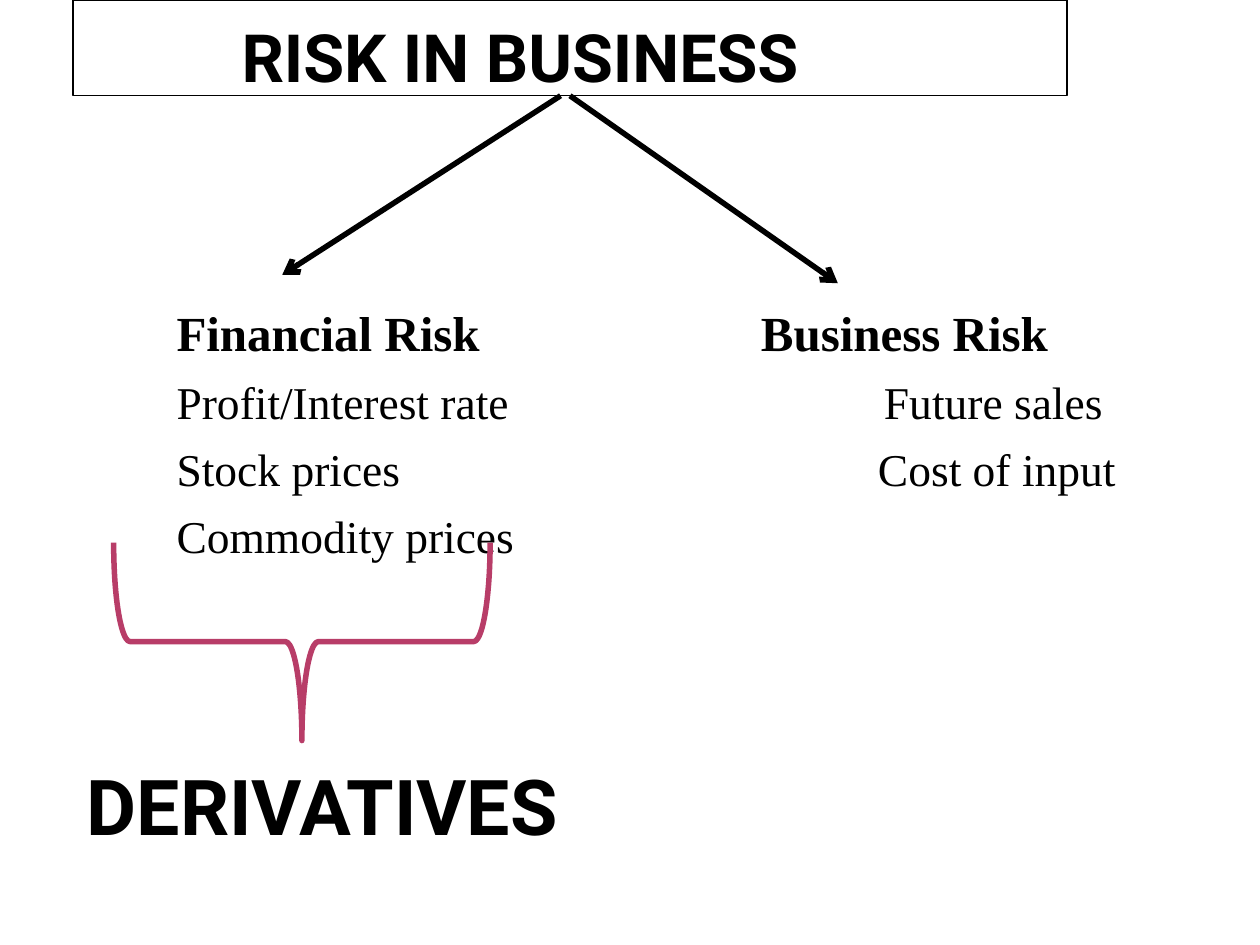
from lxml import etree
from pptx import Presentation
from pptx import util as u
from pptx.dml.color import RGBColor
from pptx.enum import shapes, text
from pptx.oxml.ns import qn

HEAD, BODY = "Roboto", "Times New Roman"
BLACK, WHITE, ROSE = "000000", "FFFFFF", "B83D68"


def rgb(value):
    return RGBColor.from_string(value)


def write(p, content, size=26, font=BODY, bold=False, before=0, indent=0):
    p.space_before = u.Pt(before)
    p.alignment = text.PP_ALIGN.LEFT
    if indent:
        p._p.get_or_add_pPr().set("marL", str(u.Cm(indent)))
    r = p.add_run()
    r.text = content
    r.font.size, r.font.name, r.font.bold = u.Pt(size), font, bold
    r.font.color.rgb = rgb(BLACK)


class Deck:
    heavy = 3.15

    def __init__(self, prs):
        self.s = prs.slides.add_slide(prs.slide_layouts[6])

    def frame(self, sp, left=0):
        tf = sp.text_frame
        tf.word_wrap = True
        tf.margin_left = u.Cm(left)
        tf.margin_right = tf.margin_top = tf.margin_bottom = 0
        return tf

    def shape(self, kind, box, line, width, fill=None):
        sp = self.s.shapes.add_shape(kind, *map(u.Cm, box))
        sp.shadow.inherit = False
        if fill:
            sp.fill.solid()
            sp.fill.fore_color.rgb = rgb(fill)
        else:
            sp.fill.background()
        sp.line.color.rgb = rgb(line)
        sp.line.width = u.Pt(width)
        return sp

    def text(self, box, lines):
        tf = self.frame(self.s.shapes.add_textbox(*map(u.Cm, box)))
        for i, (content, style) in enumerate(lines):
            p = tf.add_paragraph() if i else tf.paragraphs[0]
            write(p, content, before=7.2 if i else 0, **style)

    def arrow(self, start, end):
        c = self.s.shapes.add_connector(
            shapes.MSO_CONNECTOR.STRAIGHT, *map(u.Cm, start + end))
        c.line.color.rgb = rgb(BLACK)
        c.line.width = u.Pt(self.heavy)
        etree.SubElement(c.line._get_or_add_ln(), qn("a:tailEnd"), type="arrow")
        etree.SubElement(c._element.spPr, qn("a:effectLst"))
        return c


def main():
    prs = Presentation()
    prs.slide_width, prs.slide_height = u.Cm(25.4), u.Cm(19.05)
    deck = Deck(prs)

    # Title bar
    title = deck.shape(shapes.MSO_SHAPE.RECTANGLE, (1.47, 0, 20.04, 1.93),
                       BLACK, 0.75, WHITE)
    tf = deck.frame(title, left=3.4)
    tf.vertical_anchor = text.MSO_ANCHOR.BOTTOM
    write(tf.paragraphs[0], "RISK IN BUSINESS", size=38, font=HEAD, bold=True)

    # Two kinds of risk
    heading = dict(size=28, bold=True)
    deck.text((3.56, 6.1, 9, 5.2), [
        ("Financial Risk", heading),
        ("Profit/Interest rate", {}),
        ("Stock prices", {}),
        ("Commodity prices", {}),
    ])
    deck.text((15.34, 6.1, 9, 3.9), [
        ("Business Risk", heading),
        ("Future sales", dict(indent=2.48)),
        ("Cost of input", dict(indent=2.36)),
    ])

    # Arrows from the title to each kind
    to_business = deck.arrow((11.49, 1.93), (16.89, 5.71))
    to_business.begin_connect(title, 2)
    deck.arrow((11.3, 1.93), (5.69, 5.54))

    # Brace leading to derivatives
    brace = deck.shape(shapes.MSO_SHAPE.RIGHT_BRACE, (4.09, 9.14, 3.99, 7.59),
                       ROSE, deck.heavy)
    brace.rotation = 90
    deck.text((1.75, 15.3, 11, 1.9),
              [("DERIVATIVES", dict(size=44, font=HEAD, bold=True))])

    prs.save("out.pptx")


if __name__ == "__main__":
    main()
